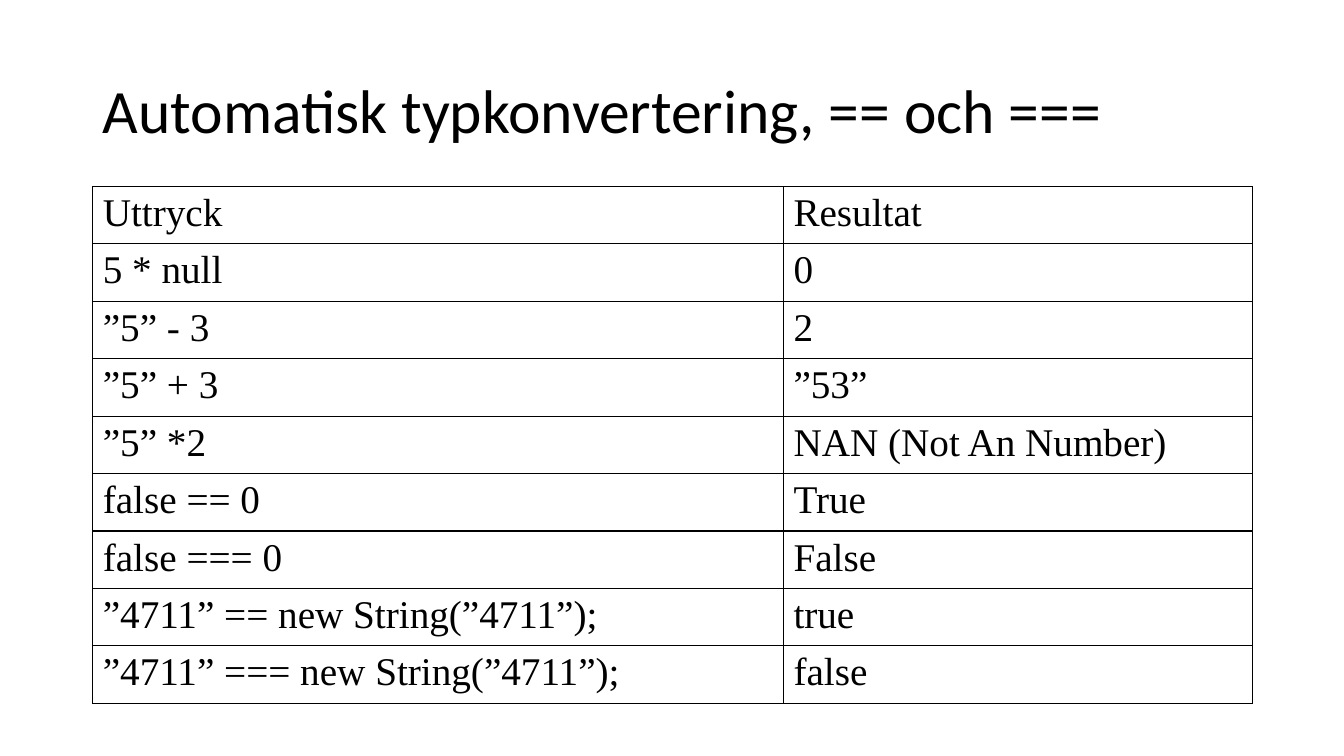
from pptx import Presentation
from pptx.dml.color import RGBColor
from pptx.enum.text import MSO_ANCHOR
from pptx.oxml import parse_xml
from pptx.oxml.ns import nsdecls
from pptx.util import Pt

PX = 9144  # 100 px to the inch
MIDDLE = MSO_ANCHOR.MIDDLE
THEME = {
    "ink": "000000",
    "paper": "FFFFFF",
    "title": ("Calibri", 44),
    "body": ("Times New Roman", 28),
}
INK = RGBColor.from_string(THEME["ink"])
LEFT, WIDTH = 92, 1150
COLS = (685, 465)
ROW = 57
ROWS = [
    ("Uttryck", "Resultat"),
    ("5 * null", "0"),
    ("”5” - 3", "2"),
    ("”5” + 3", "”53”"),
    ("”5” *2", "NAN (Not An Number)"),
    ("false == 0", "True"),
    ("false === 0", "False"),
    ("”4711” == new String(”4711”);", "true"),
    ("”4711” === new String(”4711”);", "false"),
]


def write(frame, text, style):
    para = frame.paragraphs[0]
    para.text = text
    para.font.name, size = THEME[style]
    para.font.size = Pt(size)
    para.font.color.rgb = INK
    return para


def frame_cell(cell):
    """Draw a thin line on all four sides and leave the cell unfilled."""
    props = cell._tc.get_or_add_tcPr()
    for side in ("lnL", "lnR", "lnT", "lnB"):
        props.append(parse_xml(
            f'<a:{side} {nsdecls("a")} w="{Pt(1)}"><a:solidFill>'
            f'<a:srgbClr val="{THEME["ink"]}"/></a:solidFill></a:{side}>'))
    cell.fill.background()


deck = Presentation()
deck.slide_width, deck.slide_height = 1333 * PX, 750 * PX
slide = deck.slides.add_slide(deck.slide_layouts[6])
slide.background.fill.solid()
slide.background.fill.fore_color.rgb = RGBColor.from_string(THEME["paper"])

title = slide.shapes.add_textbox(LEFT * PX, 40 * PX, WIDTH * PX, 145 * PX)
title.text_frame.word_wrap = True
title.text_frame.vertical_anchor = MIDDLE
head = write(title.text_frame, "Automatisk typkonvertering, == och ===", "title")
head.line_spacing = 0.9

table = slide.shapes.add_table(
    len(ROWS), len(COLS), LEFT * PX, 185 * PX, WIDTH * PX, len(ROWS) * ROW * PX).table
table.first_row = table.horz_banding = False
for col, width in zip(table.columns, COLS):
    col.width = width * PX
for row, texts in zip(table.rows, ROWS):
    row.height = ROW * PX
    for cell, text in zip(row.cells, texts):
        write(cell.text_frame, text, "body")
        frame_cell(cell)

deck.save("out.pptx")
